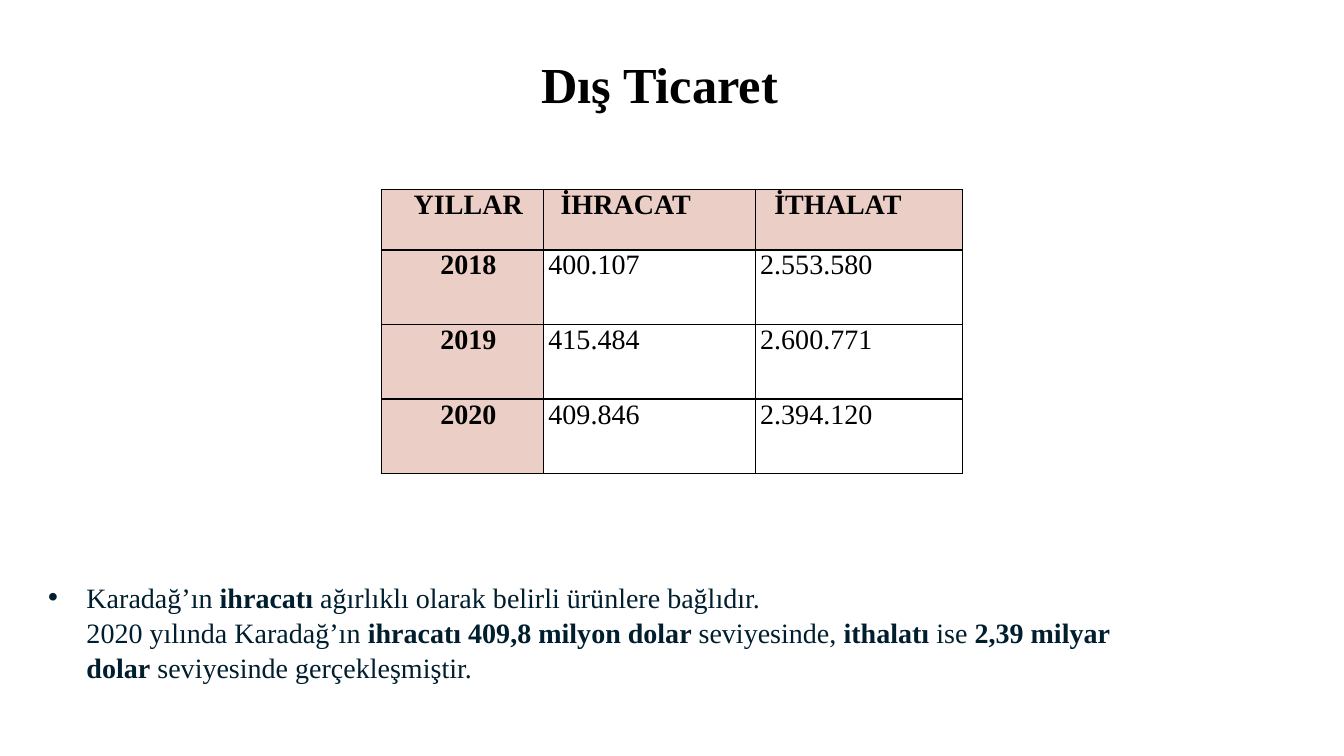
from lxml import etree
from pptx import Presentation
from pptx import util as u
from pptx.dml.color import RGBColor
from pptx.enum import text
from pptx.oxml import ns

BLACK = RGBColor(0x00, 0x00, 0x00)
NAVY = RGBColor(0x00, 0x1E, 0x2E)
PINK = RGBColor(0xEB, 0xCE, 0xC5)
WHITE = RGBColor(0xFF, 0xFF, 0xFF)
FONT = "Times New Roman"

TRADE = [
    ("YILLAR", "İHRACAT", "İTHALAT"),
    ("2018", "400.107", "2.553.580"),
    ("2019", "415.484", "2.600.771"),
    ("2020", "409.846", "2.394.120"),
]
COL_SHARES = (1.61, 2.1, 2.06)
ROW_SHARES = (0.6, 0.74, 0.74, 0.74)
HEADER_INDENTS = (0.12, 0.17, 0.19)
BODY_INDENTS = (0.12, 0.05, 0.05)

SUMMARY = [
    [("Karadağ’ın ", False), ("ihracatı", True),
     (" ağırlıklı olarak belirli ürünlere bağlıdır.", False)],
    [("2020 yılında Karadağ’ın", False), (" ihracatı 409,8 milyon dolar ", True),
     ("seviyesinde, ", False), ("ithalatı", True), (" ise ", False),
     ("2,39 milyar dolar", True), (" seviyesinde gerçekleşmiştir.", False)],
]


def style_run(r, size, color, bold):
    """Format one run in the slide font."""
    r.font.name = FONT
    r.font.size = u.Pt(size)
    r.font.bold = bold
    r.font.color.rgb = color


def set_indent(p, left, first=0):
    """Set the left margin and first-line indent of a paragraph in inches."""
    pPr = p._p.get_or_add_pPr()
    pPr.set("marL", str(u.Inches(left)))
    pPr.set("indent", str(u.Inches(first)))
    return pPr


def add_borders(cell, color, width):
    """Draw a solid line on all four sides of a cell."""
    tcPr = cell._tc.get_or_add_tcPr()
    for side in ("lnL", "lnR", "lnT", "lnB"):
        ln = etree.SubElement(tcPr, ns.qn(f"a:{side}"), w=str(u.Pt(width)))
        fill = etree.SubElement(ln, ns.qn("a:solidFill"))
        etree.SubElement(fill, ns.qn("a:srgbClr"), val=str(color))


def add_title(s, left, top, width, height):
    """Place the slide heading in the title placeholder."""
    sp = s.shapes.title
    sp.left, sp.top, sp.width, sp.height = map(u.Inches, (left, top, width, height))
    tf = sp.text_frame
    tf.text = "Dış Ticaret"
    tf.vertical_anchor = text.MSO_ANCHOR.TOP
    p = tf.paragraphs[0]
    p.alignment = text.PP_ALIGN.LEFT
    style_run(p.runs[0], 36, BLACK, True)


def fill_cell(cell, value, is_label, centered, indent):
    """Write and format one table cell."""
    add_borders(cell, BLACK, 1)
    cell.fill.solid()
    cell.fill.fore_color.rgb = PINK if is_label else WHITE
    cell.margin_left = cell.margin_right = cell.margin_top = cell.margin_bottom = 0
    cell.text = value
    p = cell.text_frame.paragraphs[0]
    p.alignment = text.PP_ALIGN.CENTER if centered else text.PP_ALIGN.LEFT
    p.space_before = u.Pt(0.9)
    set_indent(p, indent)
    style_run(p.runs[0], 20, BLACK, is_label)


def add_trade_table(s, left, top, width, height):
    """Place the table of exports and imports by year."""
    box = map(u.Inches, (left, top, width, height))
    table = s.shapes.add_table(len(TRADE), len(COL_SHARES), *box).table
    for col, share in zip(table.columns, COL_SHARES):
        col.width = u.Inches(width * share / sum(COL_SHARES))
    for row, share in zip(table.rows, ROW_SHARES):
        row.height = u.Inches(height * share / sum(ROW_SHARES))
    for i, values in enumerate(TRADE):
        indents = BODY_INDENTS if i else HEADER_INDENTS
        for j, value in enumerate(values):
            fill_cell(table.cell(i, j), value, i == 0 or j == 0, j == 0, indents[j])


def add_summary(s, left, top, width, height):
    """Place the bulleted summary under the table."""
    sp = s.shapes.add_textbox(*map(u.Inches, (left, top, width, height)))
    tf = sp.text_frame
    tf.word_wrap = True
    tf.vertical_anchor = text.MSO_ANCHOR.MIDDLE
    p = tf.paragraphs[0]
    p.line_spacing = 1.04
    pPr = set_indent(p, 0.38, -0.38)
    etree.SubElement(pPr, ns.qn("a:buFont"), typeface="Arial")
    etree.SubElement(pPr, ns.qn("a:buChar"), char="•")
    for i, line in enumerate(SUMMARY):
        if i:
            p.add_line_break()
        for value, bold in line:
            r = p.add_run()
            r.text = value
            style_run(r, 20, NAVY, bold)


def main():
    """Build and save the slide."""
    prs = Presentation()
    prs.slide_width, prs.slide_height = u.Inches(13.33), u.Inches(7.5)
    s = prs.slides.add_slide(prs.slide_layouts[5])
    add_title(s, 5.27, 0.48, 5.41, 0.71)
    add_trade_table(s, 3.78, 1.88, 5.77, 2.82)
    add_summary(s, 0.38, 5.51, 10.83, 1.51)
    prs.save("out.pptx")


if __name__ == "__main__":
    main()
